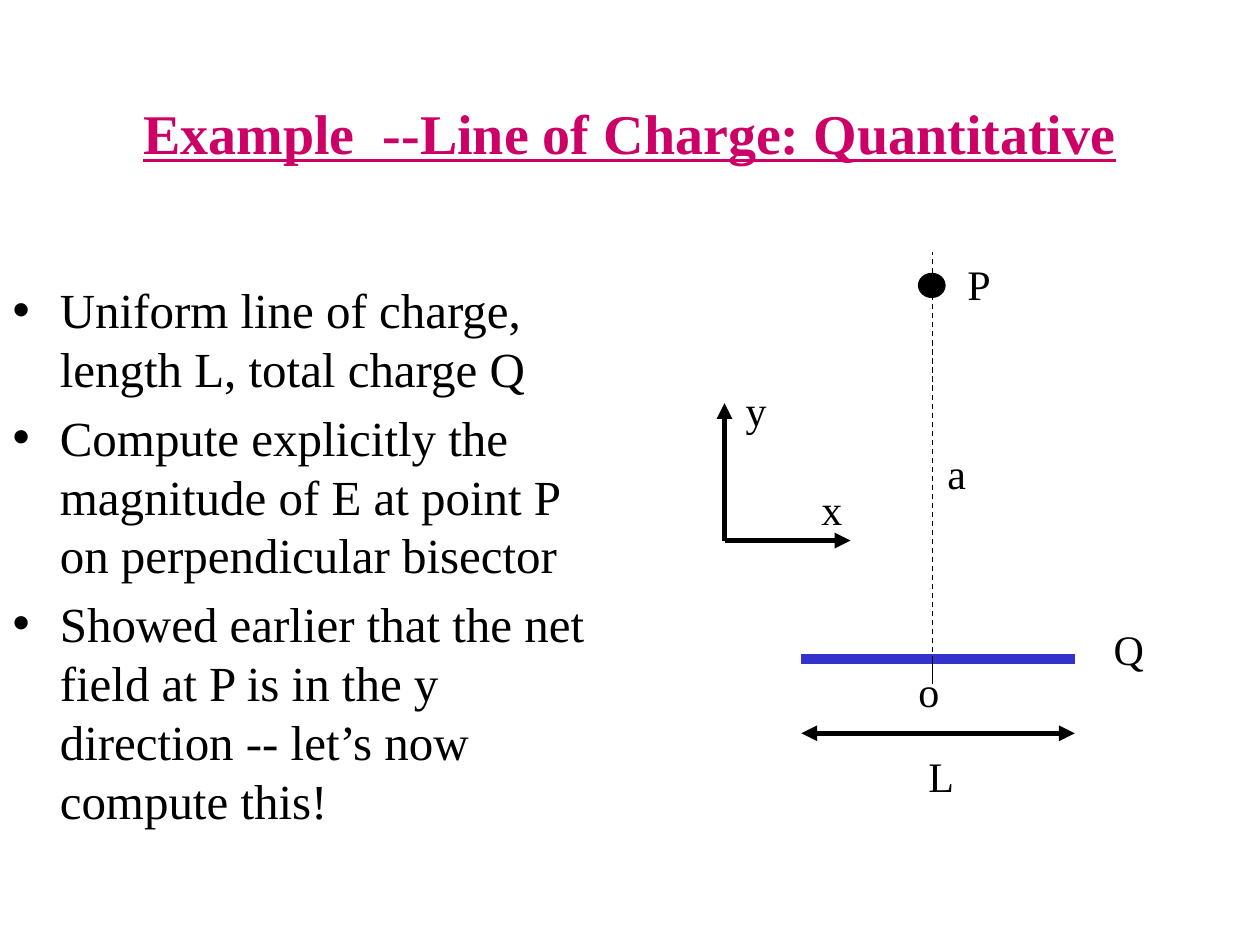
from dataclasses import dataclass

from lxml import etree
from pptx import Presentation
from pptx.dml.color import RGBColor
from pptx.enum.dml import MSO_LINE
from pptx.enum.shapes import MSO_CONNECTOR, MSO_SHAPE
from pptx.enum.text import MSO_ANCHOR, MSO_AUTO_SIZE, PP_ALIGN
from pptx.oxml.ns import qn
from pptx.util import Inches, Pt

STRAIGHT = MSO_CONNECTOR.STRAIGHT
OVAL = MSO_SHAPE.OVAL
DASH = MSO_LINE.DASH
CENTER = PP_ALIGN.CENTER
MIDDLE = MSO_ANCHOR.MIDDLE
NO_FIT = MSO_AUTO_SIZE.NONE
GROW = MSO_AUTO_SIZE.SHAPE_TO_FIT_TEXT


@dataclass(frozen=True)
class Theme:
    font: str = "Times New Roman"
    ink: RGBColor = RGBColor(0x00, 0x00, 0x00)
    accent: RGBColor = RGBColor(0xCC, 0x00, 0x66)
    charge: RGBColor = RGBColor(0x33, 0x33, 0xCC)
    title_size: int = 32
    body_size: int = 28
    label_size: int = 24
    thin: float = 0.75
    arrow: float = 3
    bar: float = 6


class SlideBuilder:
    def __init__(self, page, theme):
        self.page = page
        self.theme = theme

    def place(self, shape, left, top, width, height):
        shape.left, shape.top = Inches(left), Inches(top)
        shape.width, shape.height = Inches(width), Inches(height)

    def style(self, para, size, color):
        for span in para.runs:
            span.font.name = self.theme.font
            span.font.size = Pt(size)
            span.font.color.rgb = color

    def title(self, text, *bounds):
        box = self.page.shapes.title
        self.place(box, *bounds)
        frame = box.text_frame
        frame.text = text
        frame.auto_size = NO_FIT
        frame.vertical_anchor = MIDDLE
        para = frame.paragraphs[0]
        para.alignment = CENTER
        self.style(para, self.theme.title_size, self.theme.accent)
        para.runs[0].font.bold = True
        para.runs[0].font.underline = True

    def bullets(self, items, *bounds):
        box = self.page.placeholders[1]
        self.place(box, *bounds)
        frame = box.text_frame
        frame.text = "\n".join(items)
        frame.auto_size = NO_FIT
        for para in frame.paragraphs:
            self.style(para, self.theme.body_size, self.theme.ink)

    def label(self, text, left, top, width):
        box = self.page.shapes.add_textbox(
            Inches(left), Inches(top), Inches(width), Inches(0.5))
        frame = box.text_frame
        frame.text = text
        frame.word_wrap = False
        frame.auto_size = GROW
        self.style(frame.paragraphs[0], self.theme.label_size, self.theme.ink)

    def dot(self, left, top, width, height):
        shape = self.page.shapes.add_shape(
            OVAL, Inches(left), Inches(top), Inches(width), Inches(height))
        shape.shadow.inherit = False
        shape.fill.solid()
        shape.fill.fore_color.rgb = self.theme.ink
        shape.line.color.rgb = self.theme.ink
        shape.line.width = Pt(self.theme.thin)

    def line(self, start, end, width, color=None, dash=None, arrows=()):
        connector = self.page.shapes.add_connector(
            STRAIGHT, *(Inches(value) for value in (*start, *end)))
        connector.line.color.rgb = color or self.theme.ink
        connector.line.width = Pt(width)
        if dash:
            connector.line.dash_style = dash
        outline = connector.line._get_or_add_ln()
        for arrow_end in arrows:
            etree.SubElement(outline, qn(f"a:{arrow_end}"), type="triangle")
        etree.SubElement(connector._element.spPr, qn("a:effectLst"))


def main():
    deck = Presentation()
    deck.slide_width, deck.slide_height = Inches(10), Inches(7.5)
    theme = Theme()
    slide = SlideBuilder(deck.slides.add_slide(deck.slide_layouts[1]), theme)

    slide.title("Example  --Line of Charge: Quantitative", 0.75, 0.42, 8.5, 1.25)
    slide.bullets([
        "Uniform line of charge, length L, total charge Q",
        "Compute explicitly the magnitude of E at point P on perpendicular bisector",
        "Showed earlier that the net field at P is in the y direction -- let’s now compute this!",
    ], 0, 2.17, 4.92, 4.5)

    bar_left, bar_right, bar_y, length_y = 6.36, 8.53, 5.23, 5.82
    bisector_x = 7.4
    origin = (5.75, 4.29)

    slide.line((bar_left, bar_y), (bar_right, bar_y), theme.bar, theme.charge)
    slide.line((bar_left, length_y), (bar_right, length_y), theme.arrow,
               arrows=("headEnd", "tailEnd"))
    slide.dot(7.29, 2.17, 0.21, 0.19)
    slide.line((bisector_x, bar_y), (bisector_x, bar_y + 0.2), theme.thin)
    for tip in ((5.75, 3.2), (6.75, 4.29)):
        slide.line(origin, tip, theme.arrow, arrows=("tailEnd",))
    slide.line((bisector_x, 5.25), (bisector_x, 2), theme.thin, dash=DASH)

    for text, left, top, width in (
        ("Q", 8.74, 4.9, 0.44),
        ("L", 7.27, 5.91, 0.4),
        ("a", 7.42, 3.5, 0.35),
        ("P", 7.58, 2, 0.39),
        ("o", 7.19, 5.23, 0.37),
        ("y", 5.82, 3, 0.37),
        ("x", 6.42, 3.79, 0.37),
    ):
        slide.label(text, left, top, width)

    deck.save("out.pptx")


if __name__ == "__main__":
    main()
